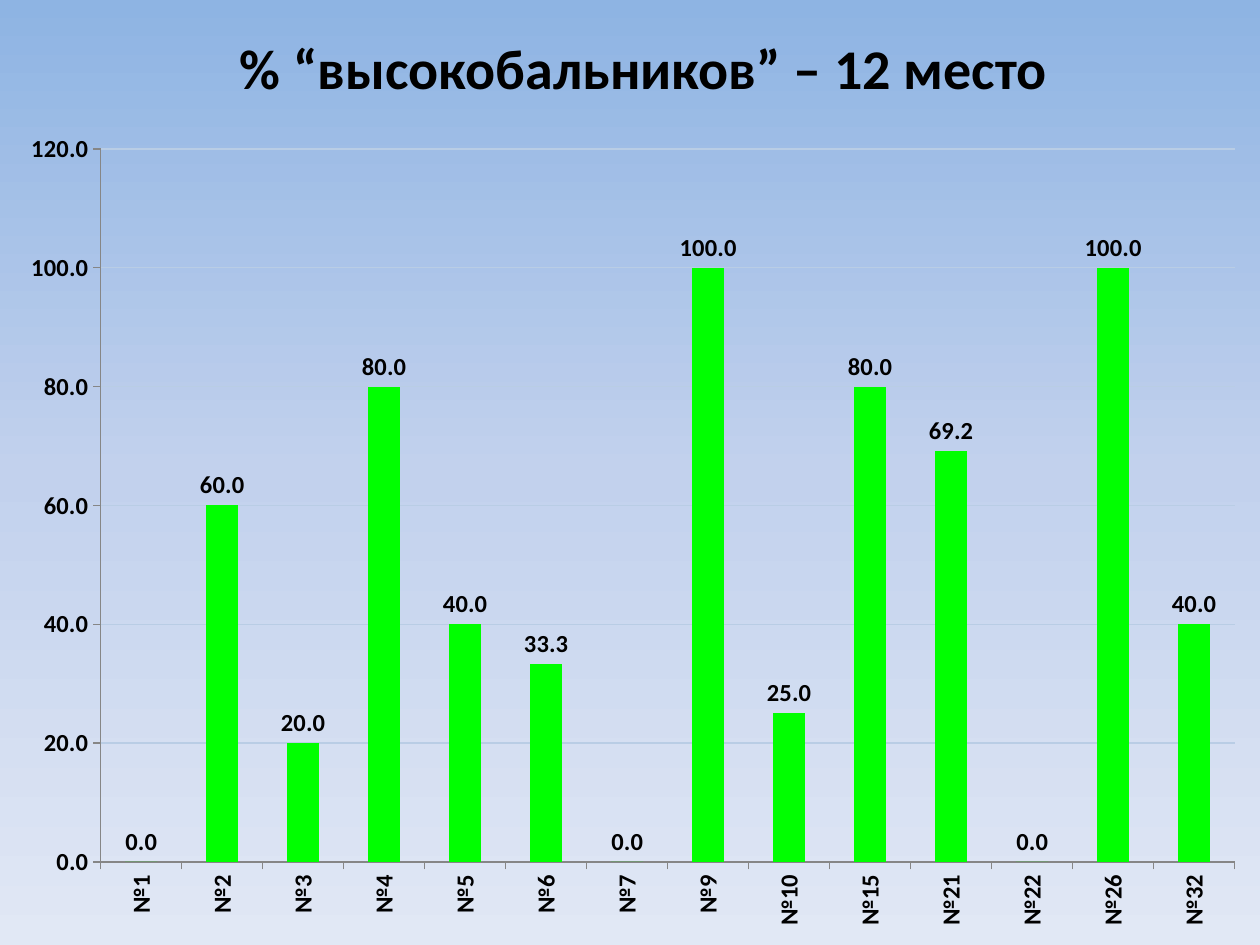
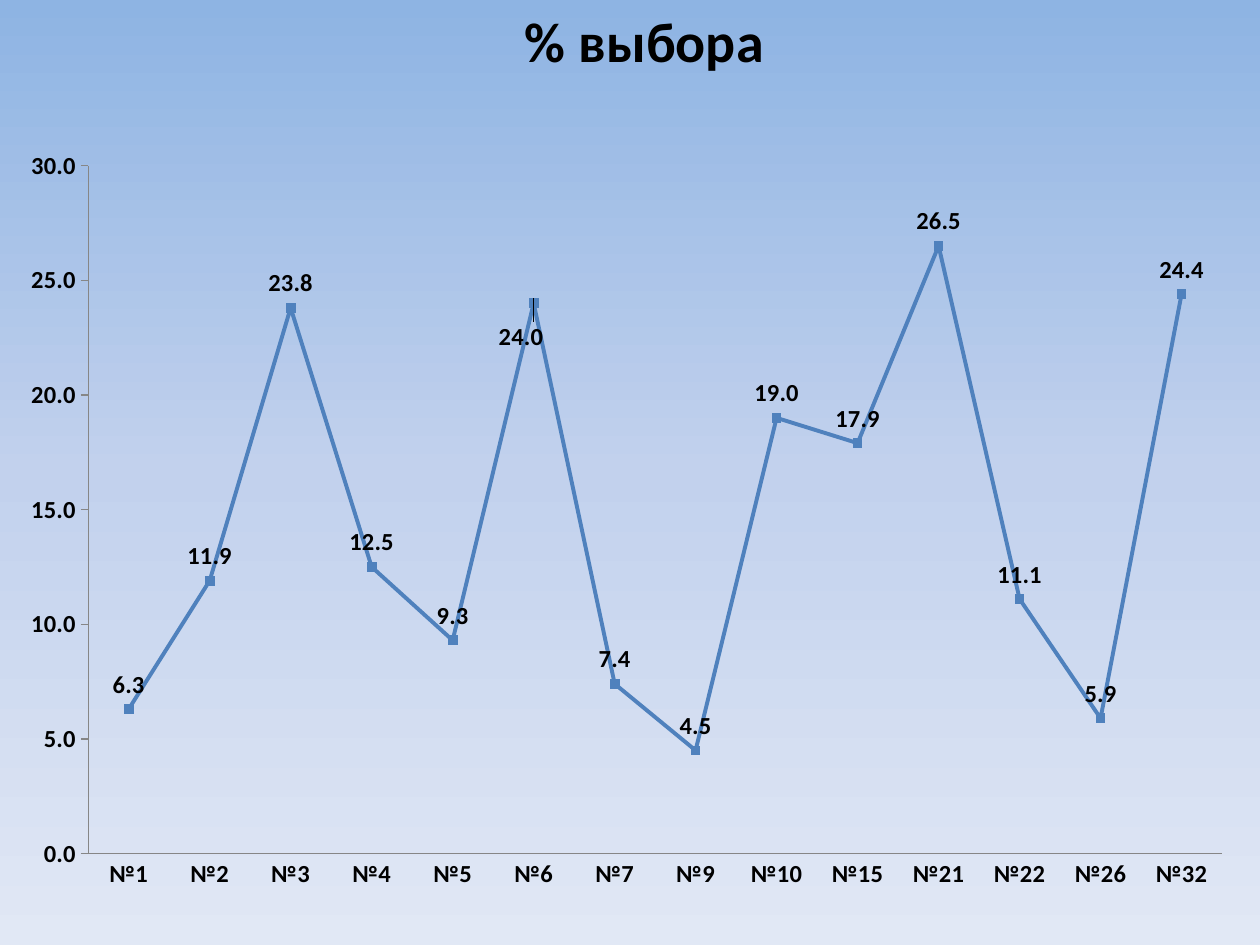
from dataclasses import dataclass

from lxml import etree
from pptx import Presentation
from pptx.chart.data import CategoryChartData
from pptx.dml.color import RGBColor
from pptx.enum.chart import XL_CHART_TYPE, XL_LABEL_POSITION, XL_MARKER_STYLE, XL_TICK_MARK
from pptx.enum.text import MSO_ANCHOR, MSO_AUTO_SIZE, PP_ALIGN
from pptx.oxml import parse_xml
from pptx.oxml.ns import nsdecls, qn
from pptx.util import Inches, Pt

COLUMNS = XL_CHART_TYPE.COLUMN_CLUSTERED
LINE = XL_CHART_TYPE.LINE_MARKERS_STACKED
ABOVE = XL_LABEL_POSITION.ABOVE
OUTSIDE_END = XL_LABEL_POSITION.OUTSIDE_END
SQUARE = XL_MARKER_STYLE.SQUARE
TICK_OUT, TICK_NONE = XL_TICK_MARK.OUTSIDE, XL_TICK_MARK.NONE
CENTER, MIDDLE = PP_ALIGN.CENTER, MSO_ANCHOR.MIDDLE
NO_AUTO_SIZE = MSO_AUTO_SIZE.NONE
TITLE_ONLY = 5


@dataclass(frozen=True)
class Theme:
    font: str = "Calibri"
    text: str = "000000"
    column: str = "00FF00"
    line: str = "4F81BD"
    axis: str = "868686"
    grid: str = "B9CDE5"
    background: tuple = ((0, "8EB4E3"), (50, "C2D1ED"), (100, "E1E8F5"))
    title_size: int = 32
    chart_size: int = 10
    label_size: int = 14
    number_format: str = "0.0"


THEME = Theme()
SCHOOLS = [f"№{n}" for n in (1, 2, 3, 4, 5, 6, 7, 9, 10, 15, 21, 22, 26, 32)]
HIGH_SCORERS = (0, 60, 20, 80, 40, 33.3, 0, 100, 25, 80, 69.2, 0, 100, 40)
CHOICE = (6.3, 11.9, 23.8, 12.5, 9.3, 24, 7.4, 4.5, 19, 17.9, 26.5, 11.1, 5.9, 24.4)


def rgb(value):
    return RGBColor.from_string(value)


def format_font(font, size=THEME.label_size, bold=True, color=THEME.text):
    font.name = THEME.font
    font.size = Pt(size)
    font.bold = bold
    font.color.rgb = rgb(color)


def format_line(line, color, width=0.75):
    line.color.rgb = rgb(color)
    line.width = Pt(width)


def fill_solid(fill, color):
    fill.solid()
    fill.fore_color.rgb = rgb(color)


def set_background(s):
    stops = "".join(
        f'<a:gs pos="{pos * 1000}"><a:srgbClr val="{color}"/></a:gs>'
        for pos, color in THEME.background)
    fill = s.background.fill
    fill.gradient()
    fill.gradient_angle = 270
    old = s.element.find(".//" + qn("a:gsLst"))
    old.getparent().replace(old, parse_xml(f'<a:gsLst {nsdecls("a")}>{stops}</a:gsLst>'))


def write_text(sp, text, size=THEME.title_size, bold=True, align=CENTER):
    tf = sp.text_frame
    tf.auto_size = NO_AUTO_SIZE
    tf.word_wrap = False
    tf.vertical_anchor = MIDDLE
    p = tf.paragraphs[0]
    p.alignment = align
    r = p.add_run()
    r.text = text
    format_font(r.font, size, bold)


def add_titled_slide(prs, title, left, top, width):
    s = prs.slides.add_slide(prs.slide_layouts[TITLE_ONLY])
    set_background(s)
    sp = s.shapes.title
    sp.left, sp.top, sp.width, sp.height = map(Inches, (left, top, width, 0.64))
    write_text(sp, title)
    return s


def manual_layout(x, y, w=None, h=None):
    """Plot layout when w and h are given, otherwise an offset for a label."""
    values = {"x": x, "y": y}
    modes = ""
    if w is not None:
        values.update(w=w, h=h)
        modes = '<c:layoutTarget val="inner"/><c:xMode val="edge"/><c:yMode val="edge"/>'
    sizes = "".join(f'<c:{key} val="{value}"/>' for key, value in values.items())
    return parse_xml(f'<c:layout {nsdecls("c")}><c:manualLayout>{modes}{sizes}'
                     '</c:manualLayout></c:layout>')


def format_axis(axis, tick):
    axis.major_tick_mark = tick
    axis.minor_tick_mark = TICK_NONE
    axis.has_major_gridlines = False
    format_line(axis.format.line, THEME.axis)
    format_font(axis.tick_labels.font)


def format_numbers(labels):
    labels.number_format = THEME.number_format
    labels.number_format_is_linked = False


def add_school_chart(s, kind, values, top_value, step, plot_box, label_position, category_tick):
    data = CategoryChartData(number_format=THEME.number_format)
    data.categories = SCHOOLS
    data.add_series("Series 1", values)
    frame = s.shapes.add_chart(kind, Inches(0), Inches(0.92), Inches(10), Inches(6.58), data)
    chart = frame.chart
    chart.has_title = False
    chart.has_legend = False
    format_font(chart.font, THEME.chart_size, bold=False)

    format_axis(chart.category_axis, category_tick)
    axis = chart.value_axis
    format_axis(axis, TICK_OUT)
    axis.minimum_scale, axis.maximum_scale, axis.major_unit = 0, top_value, step
    format_numbers(axis.tick_labels)

    plot = chart.plots[0]
    plot.vary_by_categories = False
    labels = plot.series[0].data_labels
    labels.show_value = True
    labels.position = label_position
    format_numbers(labels)
    format_font(labels.font)

    area = chart.element.find(".//" + qn("c:plotArea"))
    for old in area.findall(qn("c:layout")):
        area.remove(old)
    area.insert(0, manual_layout(*plot_box))
    return chart


def style_columns(chart):
    plot = chart.plots[0]
    plot.gap_width = 150
    fill_solid(plot.series[0].format.fill, THEME.column)
    axis = chart.value_axis
    axis.has_major_gridlines = True
    format_line(axis.major_gridlines.format.line, THEME.grid)
    category_text = chart.element.find(f".//{qn('c:catAx')}//{qn('a:bodyPr')}")
    category_text.set("rot", "-5400000")


def style_line(chart):
    series = chart.plots[0].series[0]
    series.smooth = False
    format_line(series.format.line, THEME.line, 2.25)
    marker = series.marker
    marker.style = SQUARE
    marker.size = 5
    fill_solid(marker.format.fill, THEME.line)
    format_line(marker.format.line, THEME.line)


def shift_label(chart, index, dx, dy):
    """Move one value label by fractions of the chart's size."""
    label = chart.plots[0].series[0].points[index].data_label
    format_font(label.font)
    label.position = ABOVE
    idx = chart.element.find(f".//{qn('c:dLbl')}/{qn('c:idx')}")
    idx.addnext(etree.Element(qn("c:numFmt"), formatCode=THEME.number_format, sourceLinked="0"))
    idx.addnext(manual_layout(dx, dy))


def main():
    prs = Presentation()
    prs.slide_width, prs.slide_height = Inches(10), Inches(7.5)

    s = add_titled_slide(prs, "% “высокобальников” – 12 место", 1.77, 0.21, 6.68)
    chart = add_school_chart(s, COLUMNS, HIGH_SCORERS, 120, 20,
                             (0.08, 0.04, 0.9, 0.86), OUTSIDE_END, TICK_OUT)
    style_columns(chart)

    s = add_titled_slide(prs, "% выбора", 4.06, 0, 2.11)
    chart = add_school_chart(s, LINE, CHOICE, 30, 5,
                             (0.07, 0.06, 0.9, 0.83), ABOVE, TICK_NONE)
    style_line(chart)
    shift_label(chart, SCHOOLS.index("№6"), -0.01, 0.07)

    prs.save("out.pptx")


if __name__ == "__main__":
    main()
